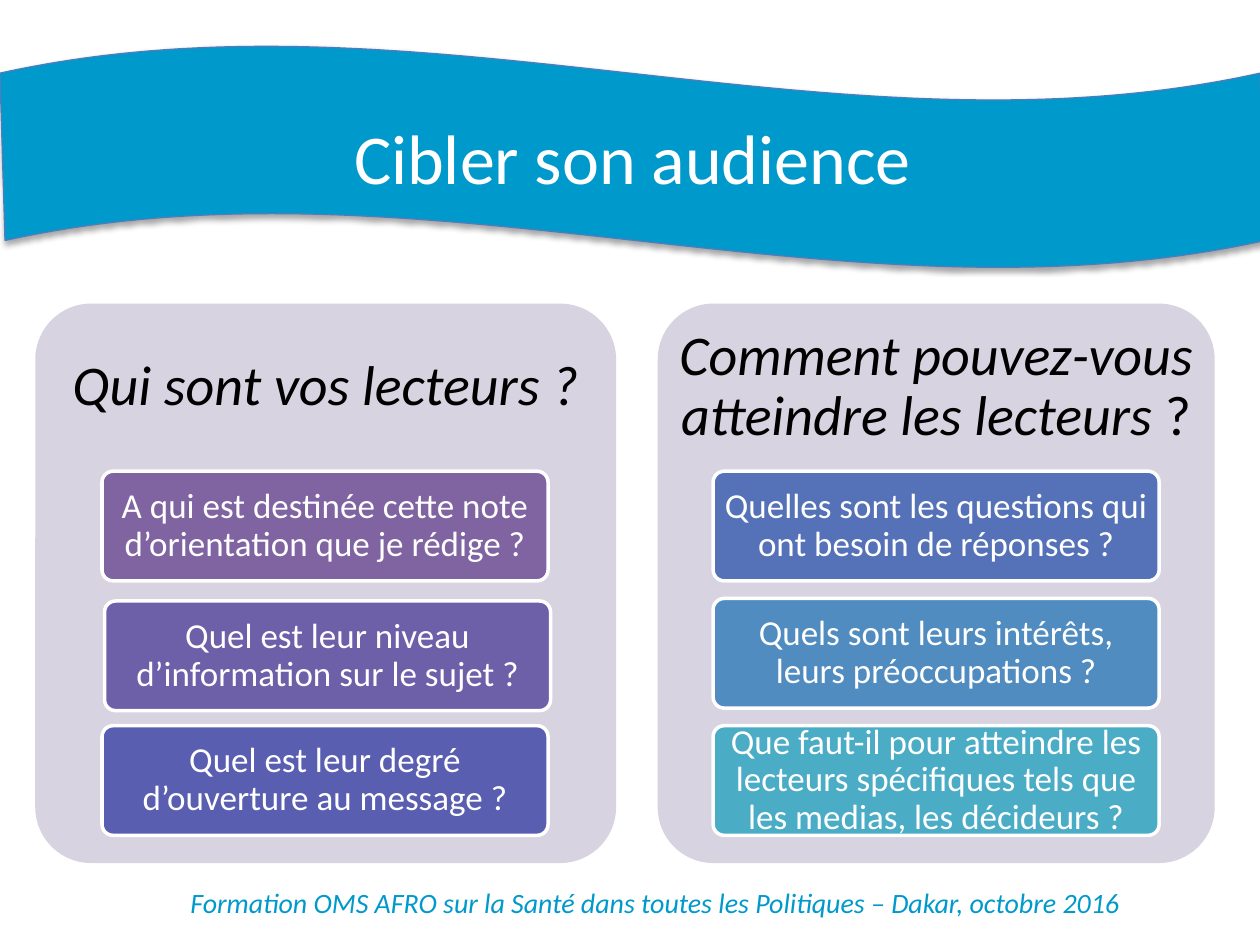
from lxml import etree
from pptx import Presentation
from pptx.dml.color import RGBColor
from pptx.enum import shapes, text
from pptx.oxml.ns import qn
from pptx.util import Inches, Pt


def rgb(value):
    return RGBColor.from_string(value)


def write(sp, runs, size, color, inset=(0.1, 0.05), spacing=None):
    """Fill a shape with one centred paragraph of (text, italic) runs."""
    tf = sp.text_frame
    tf.word_wrap = True
    tf.vertical_anchor = text.MSO_ANCHOR.MIDDLE
    tf.margin_left = tf.margin_right = Inches(inset[0])
    tf.margin_top = tf.margin_bottom = Inches(inset[1])
    p = tf.paragraphs[0]
    p.alignment = text.PP_ALIGN.CENTER
    p.line_spacing = spacing
    for words, italic in runs:
        r = p.add_run()
        r.text = words
        r.font.name = "Calibri"
        r.font.size = Pt(size)
        r.font.italic = italic
        r.font.color.rgb = rgb(color)


prs = Presentation()
prs.slide_width, prs.slide_height = Inches(10), Inches(7.5)
s = prs.slides.add_slide(prs.slide_layouts[6])

# Title banner with a soft shadow below
sp = s.shapes.add_shape(shapes.MSO_SHAPE.WAVE, Inches(0), Inches(0.36), Inches(10.04), Inches(1.77))
sp.adjustments[0], sp.adjustments[1] = 0.125, 0.002
sp.fill.solid()
sp.fill.fore_color.rgb = rgb("0099CC")
sp.line.color.rgb = rgb("4B7EBC")
sp.line.width = Pt(0.75)
sp.shadow.inherit = False
effects = sp._element.spPr.find(qn("a:effectLst"))
shadow = etree.SubElement(effects, qn("a:outerShdw"), blurRad=str(Pt(3.1)), dist=str(Pt(1.8)),
                          dir="5400000", rotWithShape="0")
black = etree.SubElement(shadow, qn("a:srgbClr"), val="000000")
etree.SubElement(black, qn("a:alpha"), val="35000")
write(sp, [("Cibler son audience", False)], 40, "FFFFFF")

# Two panels: left, width, heading runs, cards (left, top, fill, question)
panels = [
    (0.28, 4.61, [("Qui sont vos lecteurs ?", True)], [
        (0.81, 3.74, "8064A2", "A qui est destinée cette note d’orientation que je rédige ?"),
        (0.83, 4.77, "6E5FA9", "Quel est leur niveau d’information sur le sujet ?"),
        (0.81, 5.76, "5A5EB1", "Quel est leur degré d’ouverture au message ?"),
    ]),
    (5.22, 4.42, [("Comment pouvez-vous atteindre les lecteurs ", True), ("?", False)], [
        (5.66, 3.74, "5572B8", "Quelles sont les questions qui ont besoin de réponses ?"),
        (5.66, 4.75, "508CBF", "Quels sont leurs intérêts, leurs préoccupations ?"),
        (5.66, 5.76, "4BACC6",
         "Que faut-il pour atteindre les lecteurs spécifiques tels que les medias, les décideurs ?"),
    ]),
]
for left, width, heading, cards in panels:
    # Panel background
    sp = s.shapes.add_shape(shapes.MSO_SHAPE.ROUNDED_RECTANGLE,
                            Inches(left), Inches(2.41), Inches(width), Inches(4.44))
    sp.adjustments[0] = 0.1
    sp.fill.solid()
    sp.fill.fore_color.rgb = rgb("D8D3E0")
    sp.line.fill.background()
    sp.shadow.inherit = False

    # Panel heading
    sp = s.shapes.add_textbox(Inches(left), Inches(2.41), Inches(width), Inches(1.33))
    write(sp, heading, 32, "000000", (0.13, 0.13), 0.9)

    # Question cards
    for x, y, fill, question in cards:
        sp = s.shapes.add_shape(shapes.MSO_SHAPE.ROUNDED_RECTANGLE,
                                Inches(x), Inches(y), Inches(3.54), Inches(0.87))
        sp.adjustments[0] = 0.1
        sp.fill.solid()
        sp.fill.fore_color.rgb = rgb(fill)
        sp.line.color.rgb = rgb("FFFFFF")
        sp.line.width = Pt(2)
        sp.shadow.inherit = False
        write(sp, [(question, False)], 20, "FFFFFF", (0.06, 0.04), 0.9)

# Footer
sp = s.shapes.add_textbox(Inches(0.75), Inches(6.98), Inches(8.9), Inches(0.37))
write(sp, [("Formation OMS AFRO sur la Santé dans toutes les Politiques – Dakar, octobre 2016", True)],
      16, "0099CC")

prs.save("out.pptx")
